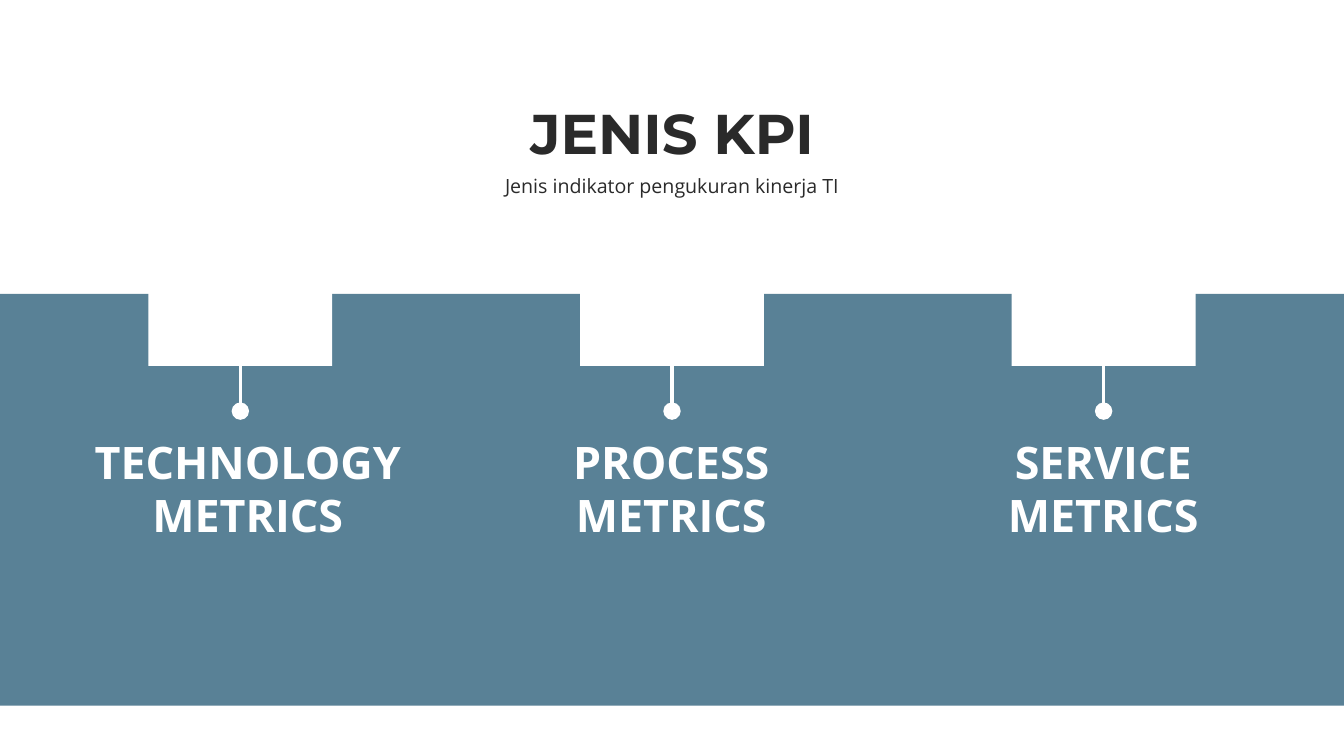
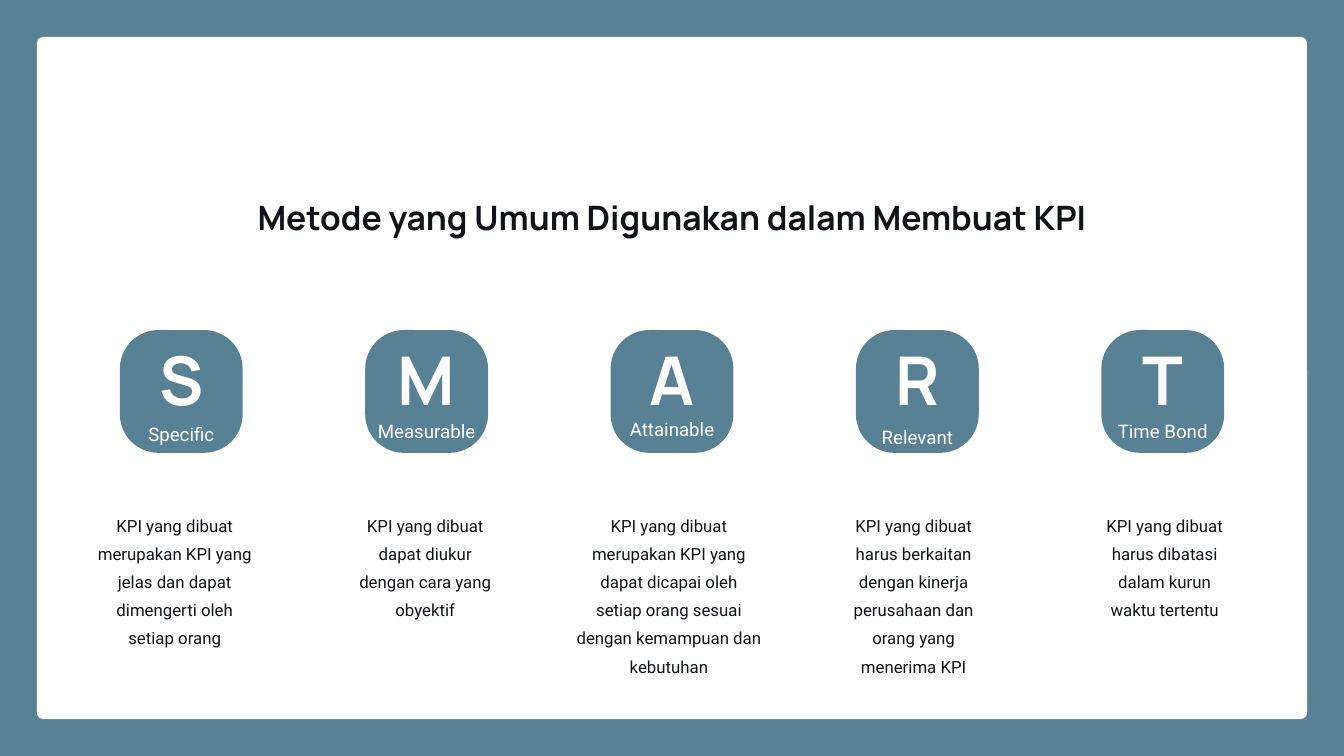
from dataclasses import dataclass

from lxml.etree import SubElement
from pptx import Presentation
from pptx.dml.color import RGBColor
from pptx.enum.shapes import MSO_CONNECTOR, MSO_SHAPE
from pptx.enum.text import MSO_ANCHOR, MSO_AUTO_SIZE, PP_ALIGN
from pptx.oxml.ns import qn
from pptx.util import Pt


@dataclass(frozen=True)
class TextStyle:
    font: str
    size: float
    color: RGBColor
    bold: bool = False
    spacing: float = 1.0


class Theme:
    teal = RGBColor(0x59, 0x81, 0x96)
    white = RGBColor(0xFF, 0xFF, 0xFF)
    charcoal = RGBColor(0x2A, 0x2A, 0x2A)
    ink = RGBColor(0x10, 0x14, 0x19)
    line_width = 3.75

    kpi_title = TextStyle("Montserrat", 60, charcoal, bold=True)
    subtitle = TextStyle("Open Sans", 21, charcoal, spacing=1.2)
    metric = TextStyle("Open Sans", 48, white, bold=True)
    smart_title = TextStyle("Manrope", 36, ink, bold=True)
    initial = TextStyle("Manrope", 72, white, bold=True)
    caption = TextStyle("Roboto", 20, white, spacing=1.26)
    description = TextStyle("Roboto", 18, ink, spacing=1.4)


SLIDE_W, SLIDE_H = 1440, 810
CENTER = SLIDE_W / 2

KPI_TITLE = "JENIS KPI"
KPI_SUBTITLE = "Jenis indikator pengukuran kinerja TI"
# name, label width, label shift from its column centre
METRICS = [
    ("TECHNOLOGY METRICS", 351, 8),
    ("PROCESS METRICS", 237.6, -0.7),
    ("SERVICE METRICS", 237.6, -0.4),
]

SMART_TITLE = "Metode yang Umum Digunakan dalam Membuat KPI"
# initial, caption, caption top, description, its width, its shift from the tile centre
CRITERIA = [
    ("S", "Specific", 447,
     "KPI yang dibuat merupakan KPI yang jelas dan dapat dimengerti oleh setiap orang",
     170.6, -7),
    ("M", "Measurable", 443.5,
     "KPI yang dibuat dapat diukur dengan cara yang obyektif",
     145.4, -1.5),
    ("A", "Attainable", 441.4,
     "KPI yang dibuat merupakan KPI yang dapat dicapai oleh setiap orang sesuai "
     "dengan kemampuan dan kebutuhan",
     198, -3.3),
    ("R", "Relevant", 450,
     "KPI yang dibuat harus berkaitan dengan kinerja perusahaan dan orang yang menerima KPI",
     147, -4),
    ("T", "Time Bond", 443.5,
     "KPI yang dibuat harus dibatasi dalam kurun waktu tertentu",
     132, 2),
]


def column_centers(count, step):
    """Centres of equally spaced columns, symmetric about the slide's middle."""
    return [CENTER + (i - (count - 1) / 2) * step for i in range(count)]


def write(shape, text, style):
    frame = shape.text_frame
    frame.margin_left = frame.margin_right = frame.margin_top = frame.margin_bottom = 0
    frame.word_wrap = True
    frame.auto_size = MSO_AUTO_SIZE.NONE
    frame.vertical_anchor = MSO_ANCHOR.TOP
    paragraph = frame.paragraphs[0]
    paragraph.alignment = PP_ALIGN.CENTER
    paragraph.line_spacing = style.spacing
    run = paragraph.add_run()
    run.text = text
    run.font.name = style.font
    run.font.size = Pt(style.size)
    run.font.bold = style.bold
    run.font.color.rgb = style.color


def add_text(slide, text, style, center, top, width, height):
    box = slide.shapes.add_textbox(Pt(center - width / 2), Pt(top), Pt(width), Pt(height))
    write(box, text, style)


def set_title(slide, text, style, top, width, height):
    title = slide.shapes.title
    title.left, title.top = Pt(CENTER - width / 2), Pt(top)
    title.width, title.height = Pt(width), Pt(height)
    write(title, text, style)
    return title


def add_block(slide, left, top, width, height, fill=None, outline=None, radius=0):
    kind = MSO_SHAPE.ROUNDED_RECTANGLE if radius else MSO_SHAPE.RECTANGLE
    block = slide.shapes.add_shape(kind, Pt(left), Pt(top), Pt(width), Pt(height))
    block.shadow.inherit = False
    if radius:
        block.adjustments[0] = radius / min(width, height)
    if fill is None:
        block.fill.background()
    else:
        block.fill.solid()
        block.fill.fore_color.rgb = fill
    if outline is None:
        block.line.fill.background()
    else:
        block.line.color.rgb = outline
        block.line.width = Pt(Theme.line_width)
    return block


def add_pin(slide, frame, center, tip):
    """Line with a round tip that hangs from the bottom of the frame."""
    pin = slide.shapes.add_connector(
        MSO_CONNECTOR.STRAIGHT, Pt(center), Pt(tip), Pt(center), frame.top + frame.height)
    pin.end_connect(frame, 2)
    pin.line.color.rgb = Theme.white
    pin.line.width = Pt(Theme.line_width)
    line = pin.element.spPr.find(qn("a:ln"))
    SubElement(line, qn("a:headEnd"), type="oval", w="lg", len="lg")
    SubElement(pin.element.spPr, qn("a:effectLst"))


def new_slide(deck, background):
    slide = deck.slides.add_slide(deck.slide_layouts[5])
    slide.background.fill.solid()
    slide.background.fill.fore_color.rgb = background
    return slide


def build_kpi_types(deck):
    slide = new_slide(deck, Theme.white)
    set_title(slide, KPI_TITLE, Theme.kpi_title, 105, 810, 73)

    bleed = 22
    add_block(slide, -bleed, 315, SLIDE_W + 2 * bleed, 441, fill=Theme.teal)

    notch, notch_top, inset = 197, 195, 4.5
    frame_size = notch - 2 * inset
    centers = column_centers(len(METRICS), 462.5)
    for center, (name, width, shift) in zip(centers, METRICS):
        add_block(slide, center - notch / 2, notch_top, notch, notch, fill=Theme.white)
        frame = add_block(slide, center - frame_size / 2, notch_top + inset,
                          frame_size, frame_size, outline=Theme.white)
        add_pin(slide, frame, center, 440.5)
        add_text(slide, name, Theme.metric, center + shift, 465.4, width, 117)

    # The notches reach up behind the subtitle, so it is added after them.
    add_text(slide, KPI_SUBTITLE, Theme.subtitle, CENTER, 181.5, 668, 25)


def build_smart(deck):
    slide = new_slide(deck, Theme.teal)
    margin = 39.6
    card = add_block(slide, margin, margin, SLIDE_W - 2 * margin, SLIDE_H - 2 * margin,
                     fill=Theme.white, radius=6.5)
    title = set_title(slide, SMART_TITLE, Theme.smart_title, 211, 1128, 44)
    card.element.addnext(title.element)  # bring the title in front of the card

    tile = 131.6
    centers = column_centers(len(CRITERIA), 262.9)
    for center, criterion in zip(centers, CRITERIA):
        initial, caption, caption_top, description, width, shift = criterion
        add_block(slide, center - tile / 2, 353.6, tile, tile, fill=Theme.teal, radius=41.4)
        add_text(slide, initial, Theme.initial, center, 362.5, 173, 87)
        add_text(slide, caption, Theme.caption, center, caption_top, tile, 24)
        add_text(slide, description, Theme.description, center + shift, 543.6, width, 150)


def main():
    deck = Presentation()
    deck.slide_width, deck.slide_height = Pt(SLIDE_W), Pt(SLIDE_H)
    build_kpi_types(deck)
    build_smart(deck)
    deck.save("out.pptx")


if __name__ == "__main__":
    main()
